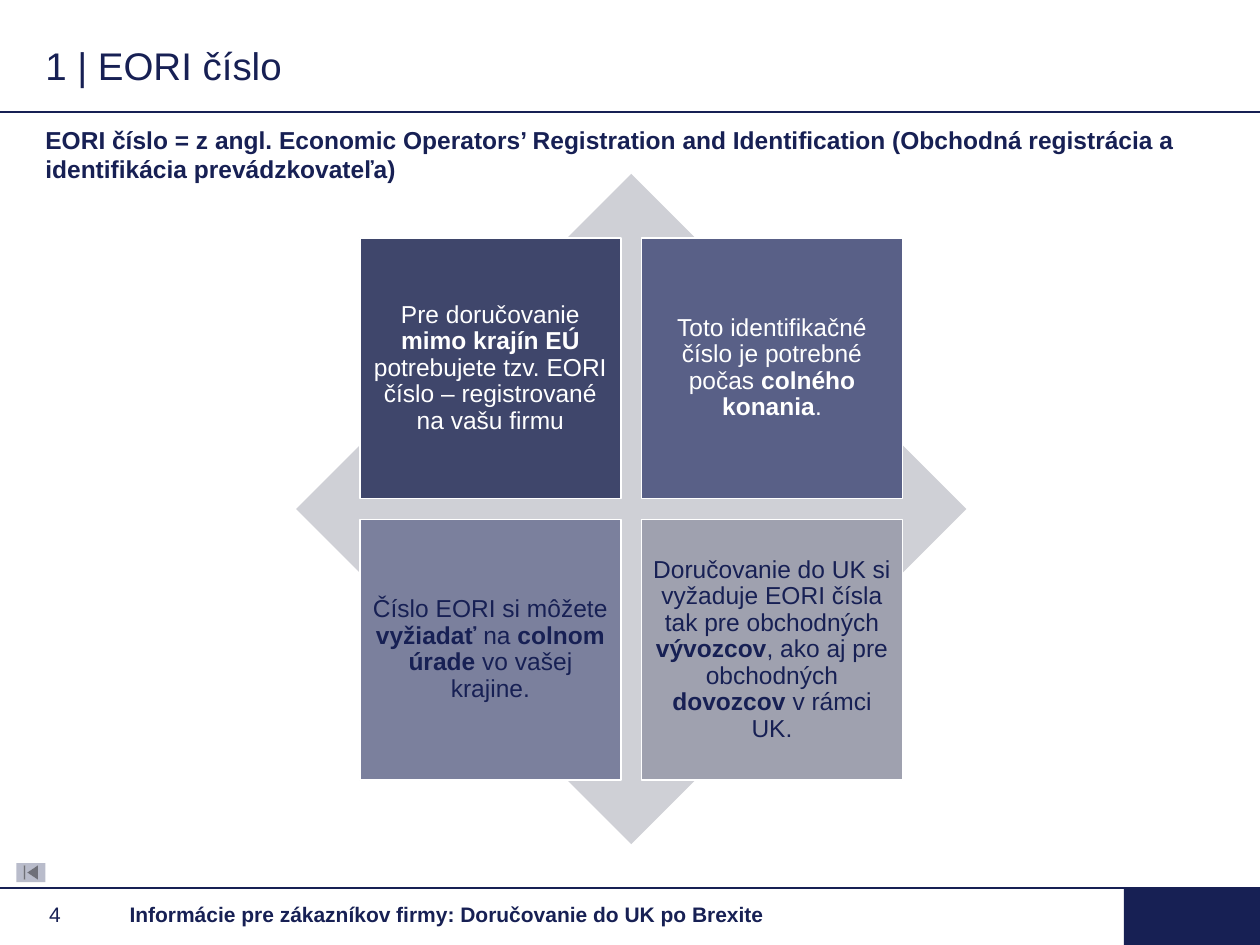
from pptx import Presentation
from pptx import util as u
from pptx.dml.color import RGBColor
from pptx.enum import shapes, text
from pptx.oxml.ns import qn

# Content: ** switches bold on and off
TITLE = "1 | EORI číslo"
SUBTITLE = ("**EORI číslo = z angl. Economic Operators’ Registration and Identification "
            "(Obchodná registrácia a identifikácia prevádzkovateľa)")
FOOTER = "**Informácie pre zákazníkov firmy: Doručovanie do UK po Brexite"
PAGE_NUMBER = "4"
CARDS = [  # wording, fill, text colour; row by row
    ("Pre doručovanie **mimo krajín EÚ **potrebujete tzv. EORI číslo – registrované na vašu firmu",
     "card1", "white"),
    ("Toto identifikačné číslo je potrebné počas **colného konania**.", "card2", "white"),
    ("Číslo EORI si môžete **vyžiadať** na **colnom úrade** vo vašej krajine.", "card3", "navy"),
    ("Doručovanie do UK si vyžaduje EORI čísla tak pre obchodných **vývozcov**, "
     "ako aj pre obchodných **dovozcov** v rámci UK.", "card4", "navy"),
]
COLORS = {"navy": "172054", "white": "FFFFFF", "diamond": "CFD0D6", "button": "B9BCCB",
          "card1": "3F466B", "card2": "596087", "card3": "7B809D", "card4": "9FA1AF"}

# Layout in inches
DIAMOND = (2.35, 1.38, 5.32)  # left, top, size
CARD_SIZE, CARD_GAP = 2.07, 0.165
FOOTER_TOP = 7.05


def color(name):
    return RGBColor.from_string(COLORS[name])


def place(shape, left, top, width, height):
    shape.left, shape.top = u.Inches(left), u.Inches(top)
    shape.width, shape.height = u.Inches(width), u.Inches(height)


def write(shape, wording, size=14, ink="navy", align=text.PP_ALIGN.LEFT,
          anchor=text.MSO_ANCHOR.MIDDLE, insets=(0, 0.05, 0.1, 0.05), spacing=1.0):
    frame = shape.text_frame
    frame.word_wrap = True
    frame.auto_size = text.MSO_AUTO_SIZE.NONE
    frame.vertical_anchor = anchor
    (frame.margin_left, frame.margin_top,
     frame.margin_right, frame.margin_bottom) = map(u.Inches, insets)
    para = frame.paragraphs[0]
    para.alignment, para.line_spacing = align, spacing
    for index, part in enumerate(wording.split("**")):
        if part:
            span = para.add_run()
            span.text = part
            span.font.name, span.font.size = "Arial", u.Pt(size)
            span.font.bold = index % 2 == 1
            span.font.color.rgb = color(ink)


def add_block(page, kind, fill, left, top, width, height, outline=None):
    block = page.shapes.add_shape(kind, *map(u.Inches, (left, top, width, height)))
    block.shadow.inherit = False
    block.fill.solid()
    block.fill.fore_color.rgb = color(fill)
    if outline:
        block.line.color.rgb = color(outline)
        block.line.width = u.Pt(1)
    else:
        block.line.fill.background()
    return block


def add_text(page, wording, left, top, width, height, **style):
    box = page.shapes.add_textbox(*map(u.Inches, (left, top, width, height)))
    write(box, wording, **style)


def add_rule(page, top):
    rule = page.shapes.add_connector(shapes.MSO_CONNECTOR.STRAIGHT, 0, u.Inches(top),
                                     u.Inches(10), u.Inches(top))
    rule.line.color.rgb = color("navy")
    rule.line.width = u.Pt(1)
    properties = rule._element.spPr
    properties.append(properties.makeelement(qn("a:effectLst"), {}))


def main():
    deck = Presentation()
    deck.slide_width, deck.slide_height = u.Inches(10), u.Inches(7.5)
    page = deck.slides.add_slide(deck.slide_layouts[5])
    kinds = shapes.MSO_SHAPE

    # Frame of the page
    add_rule(page, 0.89)
    add_rule(page, FOOTER_TOP)
    add_block(page, kinds.RECTANGLE, "navy", 8.92, FOOTER_TOP, 1.08, 0.45)

    # Title, subtitle and footer
    place(page.shapes.title, 0.36, 0.28, 9.29, 0.47)
    write(page.shapes.title, TITLE, size=22)
    add_text(page, SUBTITLE, 0.36, 0.94, 9.29, 0.25, anchor=text.MSO_ANCHOR.TOP)
    add_text(page, FOOTER, 0.93, 7.13, 5.95, 0.25, size=12, insets=(0.1, 0.05, 0.1, 0.05))
    add_text(page, PAGE_NUMBER, 0.39, 7.13, 0.54, 0.25, size=12)

    # Diamond with four cards centred on it
    left, top, size = DIAMOND
    add_block(page, kinds.DIAMOND, "diamond", left, top, size, size)
    margin = (size - 2 * CARD_SIZE - CARD_GAP) / 2
    step = CARD_SIZE + CARD_GAP
    for index, (wording, fill, ink) in enumerate(CARDS):
        row, column = divmod(index, 2)
        card = add_block(page, kinds.RECTANGLE, fill, left + margin + column * step,
                         top + margin + row * step, CARD_SIZE, CARD_SIZE, outline="white")
        write(card, wording, ink=ink, align=text.PP_ALIGN.CENTER,
              insets=(0.08,) * 4, spacing=0.9)

    # Back-to-start button
    add_block(page, kinds.ACTION_BUTTON_BEGINNING, "button", 0.13, 6.85, 0.23, 0.15)

    deck.save("out.pptx")


if __name__ == "__main__":
    main()
